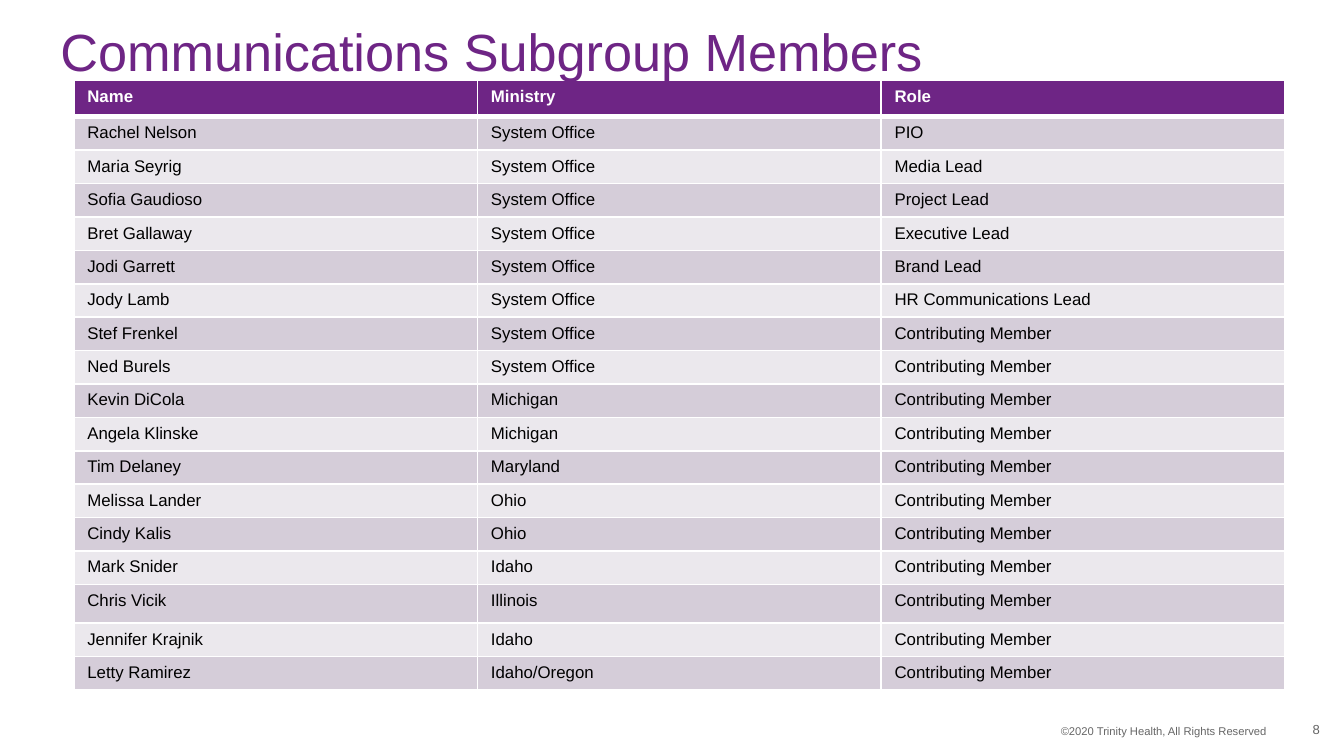
import pptx
import pptx.dml.color
import pptx.enum.text
import pptx.oxml
import pptx.oxml.ns
import pptx.util

Inches = pptx.util.Inches
RGBColor = pptx.dml.color.RGBColor
PP_ALIGN = pptx.enum.text.PP_ALIGN
MSO_ANCHOR = pptx.enum.text.MSO_ANCHOR

PURPLE = RGBColor(0x6E, 0x25, 0x85)
BAND_DARK = RGBColor(0xD5, 0xCD, 0xD9)
BAND_LIGHT = RGBColor(0xEB, 0xE8, 0xED)
WHITE = RGBColor(0xFF, 0xFF, 0xFF)
BLACK = RGBColor(0, 0, 0)
GRAY = RGBColor(0x66, 0x66, 0x66)
FONT = "Arial"

HEADER = ("Name", "Ministry", "Role")
SYSTEM = "System Office"
CONTRIBUTOR = "Contributing Member"
MEMBERS = [
    ("Rachel Nelson", SYSTEM, "PIO"),
    ("Maria Seyrig", SYSTEM, "Media Lead"),
    ("Sofia Gaudioso", SYSTEM, "Project Lead"),
    ("Bret Gallaway", SYSTEM, "Executive Lead"),
    ("Jodi Garrett", SYSTEM, "Brand Lead"),
    ("Jody Lamb", SYSTEM, "HR Communications Lead"),
    ("Stef Frenkel", SYSTEM, CONTRIBUTOR),
    ("Ned Burels", SYSTEM, CONTRIBUTOR),
    ("Kevin DiCola", "Michigan", CONTRIBUTOR),
    ("Angela Klinske", "Michigan", CONTRIBUTOR),
    ("Tim Delaney", "Maryland", CONTRIBUTOR),
    ("Melissa Lander", "Ohio", CONTRIBUTOR),
    ("Cindy Kalis", "Ohio", CONTRIBUTOR),
    ("Mark Snider", "Idaho", CONTRIBUTOR),
    ("Chris Vicik", "Illinois", CONTRIBUTOR),
    ("Jennifer Krajnik", "Idaho", CONTRIBUTOR),
    ("Letty Ramirez", "Idaho/Oregon", CONTRIBUTOR),
]
SPECIAL_HEIGHTS = {0: 0.27, 15: 0.29}  # header and one taller row


def format_text(text_frame, size, color, bold=False, align=PP_ALIGN.LEFT):
    paragraph = text_frame.paragraphs[0]
    paragraph.alignment = align
    for run in paragraph.runs:
        run.font.name = FONT
        run.font.size = pptx.util.Pt(size)
        run.font.bold = bold
        run.font.color.rgb = color


def set_borders(cell, bottom_width):
    """Add white borders, which must come before the cell's fill."""
    properties = cell._tc.get_or_add_tcPr()
    for side, width in (("L", 1), ("R", 1), ("T", 1), ("B", bottom_width)):
        properties.append(pptx.oxml.parse_xml(
            f'<a:ln{side} {pptx.oxml.ns.nsdecls("a")} w="{pptx.util.Pt(width)}">'
            f'<a:solidFill><a:srgbClr val="{WHITE}"/></a:solidFill></a:ln{side}>'))


def add_title(slide, left, top, width, height):
    title = slide.shapes.title
    title.left, title.top = Inches(left), Inches(top)
    title.width, title.height = Inches(width), Inches(height)
    frame = title.text_frame
    frame.text = "Communications Subgroup Members"
    frame.auto_size = pptx.enum.text.MSO_AUTO_SIZE.NONE
    frame.vertical_anchor = MSO_ANCHOR.MIDDLE
    frame.margin_left = frame.margin_right = 0
    frame.margin_top = frame.margin_bottom = 0
    frame.paragraphs[0].line_spacing = 0.9
    format_text(frame, 28, PURPLE)
    # Bring the title in front of the table
    slide.shapes._spTree.append(title._element)


def add_member_table(slide, left, top, width, height):
    rows = [HEADER] + MEMBERS
    table = slide.shapes.add_table(
        len(rows), len(HEADER),
        Inches(left), Inches(top), Inches(width), Inches(height)).table
    for column in table.columns:
        column.width = Inches(width / len(HEADER))

    # Ordinary rows share what the special rows leave
    regular_height = ((height - sum(SPECIAL_HEIGHTS.values()))
                      / (len(rows) - len(SPECIAL_HEIGHTS)))
    for row_index, values in enumerate(rows):
        is_header = row_index == 0
        table.rows[row_index].height = Inches(
            SPECIAL_HEIGHTS.get(row_index, regular_height))
        band = BAND_DARK if row_index % 2 else BAND_LIGHT
        for column_index, value in enumerate(values):
            cell = table.cell(row_index, column_index)
            cell.text_frame.text = value
            format_text(cell.text_frame, 9, WHITE if is_header else BLACK, is_header)
            set_borders(cell, 3 if is_header else 1)
            cell.fill.solid()
            cell.fill.fore_color.rgb = PURPLE if is_header else band


def add_footer_text(slide, text, size, left, top, width, height):
    box = slide.shapes.add_textbox(
        Inches(left), Inches(top), Inches(width), Inches(height))
    frame = box.text_frame
    frame.word_wrap = True
    frame.text = text
    format_text(frame, size, GRAY, align=PP_ALIGN.RIGHT)
    return frame


def add_footer(slide, left, top, width, height):
    # Copyright line
    add_footer_text(slide, "©2020 Trinity Health, All Rights Reserved", 6,
                    left, top + 0.06, 4.19, 0.2)
    # Page number
    number_width = 0.44
    number = add_footer_text(slide, "8", 7, left + width - number_width, top,
                             number_width, height)
    number.vertical_anchor = MSO_ANCHOR.MIDDLE
    number.margin_right = 0


def main():
    presentation = pptx.Presentation()
    # Widescreen, 16 to 9
    presentation.slide_width = Inches(10)
    presentation.slide_height = Inches(10 * 9 / 16)
    slide = presentation.slides.add_slide(presentation.slide_layouts[5])
    add_member_table(slide, 0.55, 0.6, 9.01, 4.54)
    add_title(slide, 0.45, 0.13, 9, 0.55)
    add_footer(slide, 5.33, 5.28, 4.49, 0.3)
    presentation.save("out.pptx")


if __name__ == "__main__":
    main()
